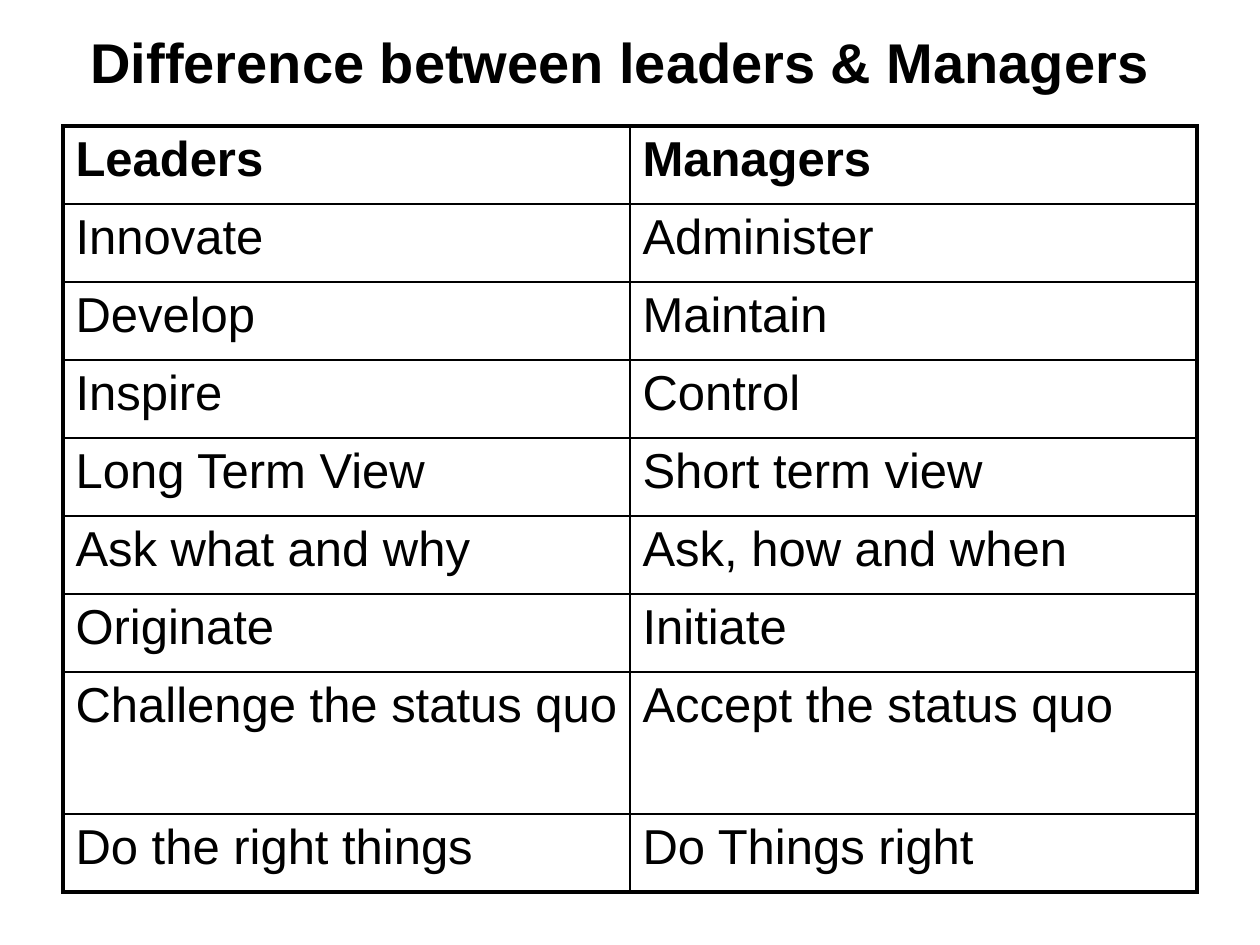
from lxml import etree
from pptx import Presentation
from pptx.dml.color import RGBColor
from pptx.enum.text import MSO_ANCHOR, MSO_AUTO_SIZE, PP_ALIGN
from pptx.oxml.ns import qn
from pptx.util import Pt

MIDDLE = MSO_ANCHOR.MIDDLE
FIXED = MSO_AUTO_SIZE.NONE
CENTER = PP_ALIGN.CENTER
FONT = "Arial"
INK = "000000"
THIN, THICK = 1, 2.25
TITLE = "Difference between leaders & Managers"
PAIRS = [
    ("Leaders", "Managers"),
    ("Innovate", "Administer"),
    ("Develop", "Maintain"),
    ("Inspire", "Control"),
    ("Long Term View", "Short term view"),
    ("Ask what and why", "Ask, how and when"),
    ("Originate", "Initiate"),
    ("Challenge the status quo", "Accept the status quo"),
    ("Do the right things", "Do Things right"),
]
TALL = 7
ROW, TALL_ROW = 44.6, 81


def color(code):
    """Turn a hex string into a colour."""
    return RGBColor.from_string(code)


def add_run(para, text, size, bold=False):
    """Add one formatted run to a paragraph."""
    run = para.add_run()
    run.text = text
    font = run.font
    font.name, font.size, font.bold = FONT, Pt(size), bold
    font.color.rgb = color(INK)


def add_edge(cell, side, width):
    """Draw one border of a cell; side is L, R, T or B."""
    props = cell._tc.get_or_add_tcPr()
    line = etree.SubElement(props, qn(f"a:ln{side}"), w=str(Pt(width)))
    fill = etree.SubElement(line, qn("a:solidFill"))
    etree.SubElement(fill, qn("a:srgbClr"), val=INK)


def add_title(slide, left, top, width, height):
    """Place the heading in the title placeholder."""
    title = slide.shapes.title
    title.left, title.top = Pt(left), Pt(top)
    title.width, title.height = Pt(width), Pt(height)
    frame = title.text_frame
    frame.word_wrap = True
    frame.auto_size = FIXED
    frame.vertical_anchor = MIDDLE
    para = frame.paragraphs[0]
    para.alignment = CENTER
    add_run(para, TITLE, 32, True)
    add_run(para, " ", 40)


def add_grid(slide, left, top, width):
    """Place the table that sets leaders against managers."""
    rows, cols = len(PAIRS), len(PAIRS[0])
    high = ROW * (rows - 1) + TALL_ROW
    table = slide.shapes.add_table(
        rows, cols, Pt(left), Pt(top), Pt(width), Pt(high)).table
    table.first_row = table.horz_banding = False
    for col in table.columns:
        col.width = Pt(width / cols)
    for i, pair in enumerate(PAIRS):
        table.rows[i].height = Pt(TALL_ROW if i == TALL else ROW)
        for j, text in enumerate(pair):
            cell = table.cell(i, j)
            add_run(cell.text_frame.paragraphs[0], text, 28, i == 0)
            outer = {"L": j == 0, "R": j == cols - 1,
                     "T": i == 0, "B": i == rows - 1}
            for side, edge in outer.items():
                add_edge(cell, side, THICK if edge else THIN)
            cell.fill.background()


def main():
    """Build and save the slide."""
    deck = Presentation()
    deck.slide_width, deck.slide_height = Pt(720), Pt(540)
    slide = deck.slides.add_slide(deck.slide_layouts[5])
    add_title(slide, 36, 21.6, 648, 20)
    add_grid(slide, 36, 72, 648)
    deck.save("out.pptx")


if __name__ == "__main__":
    main()
